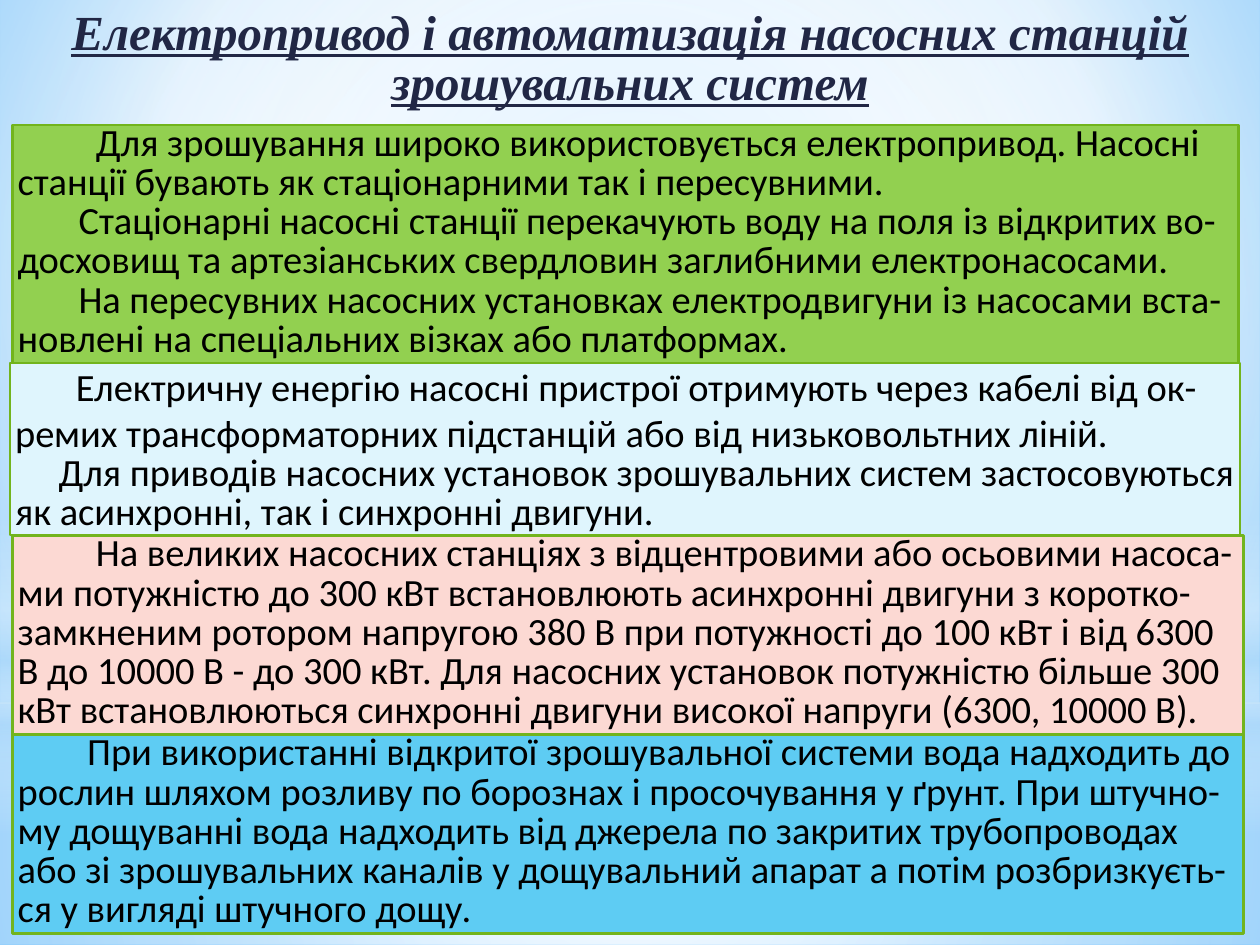
from dataclasses import dataclass

from pptx import Presentation
from pptx.dml.color import RGBColor
from pptx.enum.shapes import MSO_SHAPE
from pptx.enum.text import MSO_ANCHOR, MSO_AUTO_SIZE, PP_ALIGN
from pptx.oxml import parse_xml
from pptx.oxml.ns import nsdecls, qn
from pptx.util import Inches, Pt

RECT, OVAL = MSO_SHAPE.RECTANGLE, MSO_SHAPE.OVAL
TOP, GROW = MSO_ANCHOR.TOP, MSO_AUTO_SIZE.SHAPE_TO_FIT_TEXT
LEFT, CENTER = PP_ALIGN.LEFT, PP_ALIGN.CENTER
TITLE_ONLY = 5
CELL = Inches(0.1)
CENTRE = (50, 50, 50, 50)


@dataclass(frozen=True)
class Theme:
    title_font: str = "Times New Roman"
    body_font: str = "Calibri"
    title_size: int = 28
    body_size: int = 22
    title_color: str = "212745"
    body_color: str = "000000"
    border: str = "72B41D"
    border_width: float = 1.25
    spacing: float = 0.85
    space_width: float = 0.226
    white: str = "FFFFFF"
    haze: str = "B4DCFA"
    sky: str = "9ED5FF"
    deep_sky: str = "5BB9FF"
    green: str = "92D050"
    ice: str = "DFF5FD"
    pink: str = "FCD9D3"
    blue: str = "5ECCF3"


THEME = Theme()

BACKDROP = [(0, THEME.sky, 100), (60, THEME.white, 100), (100, THEME.deep_sky, 100)]

HAZE_LAYERS = [
    (RECT, (0, 55.8, 100, 19.2), CENTRE,
     [(0, THEME.white, 91), (37, THEME.white, 76), (100, THEME.haze, 79)]),
    (RECT, (0, 0, 100, 55.8), CENTRE,
     [(0, THEME.white, 89), (48, THEME.white, 62), (100, THEME.haze, 79)]),
    (RECT, (0, 41.2, 100, 25), None,
     [(0, THEME.white, 0), (29, THEME.white, 30), (45, THEME.haze, 40),
      (55, THEME.white, 26), (65, THEME.haze, 60), (100, THEME.white, 0)]),
    (OVAL, (0, 17.5, 100, 55.8), CENTRE,
     [(0, THEME.white, 100), (56, THEME.white, 0)]),
]

TITLE = "Електропривод і автоматизація насосних станцій зрошувальних систем"

SECTIONS = [
    ((1, 9.9, 97.3, 18.9), THEME.green, [
        (9, THEME.spacing, "Для зрошування широко використовується електропривод. Насосні "
         "станції бувають як стаціонарними так і пересувними."),
        (7, THEME.spacing, "Стаціонарні насосні станції перекачують воду на поля із відкритих "
         "во-досховищ та артезіанських свердловин заглибними електронасосами."),
        (7, THEME.spacing, "На пересувних насосних установках електродвигуни із насосами "
         "вста-новлені на спеціальних візках або платформах."),
    ]),
    ((0.8, 28.8, 97.6, 13.7), THEME.ice, [
        (7, 1.0, "Електричну енергію насосні пристрої отримують через кабелі від "
         "ок-ремих трансформаторних підстанцій або від низьковольтних ліній."),
        (5, THEME.spacing, "Для приводів насосних установок зрошувальних систем "
         "застосовуються як асинхронні, так і синхронні двигуни."),
    ]),
    ((1, 42.5, 97.7, 15.8), THEME.pink, [
        (9, THEME.spacing, "На великих насосних станціях з відцентровими або осьовими "
         "насоса-ми потужністю до 300 кВт встановлюють асинхронні двигуни з "
         "коротко-замкненим ротором напругою 380 В при потужності до 100 кВт і від "
         "6300 В до 10000 В - до 300 кВт. Для насосних установок потужністю більше "
         "300 кВт встановлюються синхронні двигуни високої напруги (6300, 10000 В)."),
    ]),
    ((1, 58.3, 97.7, 15.8), THEME.blue, [
        (8, THEME.spacing, "При використанні відкритої зрошувальної системи вода надходить "
         "до рослин шляхом розливу по борознах і просочування у ґрунт. При штучно-му "
         "дощуванні вода надходить від джерела по закритих трубопроводах або зі "
         "зрошувальних каналів у дощувальний апарат а потім розбризкуєть-ся у вигляді "
         "штучного дощу."),
    ]),
]


def grid(box):
    return [round(cells * CELL) for cells in box]


def set_gradient(fill, owner, stops, focus):
    fill.gradient()
    gradient = owner.find(".//" + qn("a:gradFill"))
    gradient.clear()
    marks = "".join(
        f'<a:gs pos="{pos * 1000}"><a:srgbClr val="{color}">'
        f'<a:alpha val="{opacity * 1000}"/></a:srgbClr></a:gs>'
        for pos, color, opacity in stops)
    gradient.append(parse_xml(f'<a:gsLst {nsdecls("a")}>{marks}</a:gsLst>'))
    if focus:
        sides = " ".join(f'{side}="{share * 1000}"' for side, share in zip("ltrb", focus))
        shade = f'<a:path {nsdecls("a")} path="circle"><a:fillToRect {sides}/></a:path>'
    else:
        shade = f'<a:lin {nsdecls("a")} ang="5400000" scaled="0"/>'
    gradient.append(parse_xml(shade))


def prepare_frame(frame, side_inset):
    frame.word_wrap = True
    frame.auto_size = GROW
    frame.vertical_anchor = TOP
    frame.margin_left = frame.margin_right = Inches(side_inset)
    frame.margin_top = frame.margin_bottom = 0


def write(paragraph, text, *, font, size, color, align=LEFT, spacing=THEME.spacing,
          indent=0, emphasis=False):
    paragraph.alignment = align
    paragraph.line_spacing = spacing
    paragraph.space_before = paragraph.space_after = Pt(0)
    if indent:
        properties = paragraph._p.get_or_add_pPr()
        properties.set("marL", "0")
        properties.set("indent", str(Pt(indent)))
    run = paragraph.add_run()
    run.text = text
    run.font.name = font
    run.font.size = Pt(size)
    run.font.color.rgb = RGBColor.from_string(color)
    run.font.bold = run.font.italic = run.font.underline = emphasis


def draw_backdrop(slide):
    set_gradient(slide.background.fill, slide.element, BACKDROP, (20, 10, 20, 60))
    for outline, box, focus, stops in HAZE_LAYERS:
        layer = slide.shapes.add_shape(outline, *grid(box))
        layer.shadow.inherit = False
        layer.line.fill.background()
        set_gradient(layer.fill, layer.element, stops, focus)


def place_title(slide, box):
    title = slide.shapes.title
    title.left, title.top, title.width, title.height = grid(box)
    title.element.getparent().append(title.element)
    prepare_frame(title.text_frame, 0)
    write(title.text_frame.paragraphs[0], TITLE, font=THEME.title_font,
          size=THEME.title_size, color=THEME.title_color, align=CENTER, emphasis=True)


def draw_section(slide, box, color, passages):
    section = slide.shapes.add_shape(RECT, *grid(box))
    section.shadow.inherit = False
    section.fill.solid()
    section.fill.fore_color.rgb = RGBColor.from_string(color)
    section.line.color.rgb = RGBColor.from_string(THEME.border)
    section.line.width = Pt(THEME.border_width)
    frame = section.text_frame
    prepare_frame(frame, 0.04)
    for number, (spaces, spacing, text) in enumerate(passages):
        paragraph = frame.add_paragraph() if number else frame.paragraphs[0]
        write(paragraph, text, font=THEME.body_font, size=THEME.body_size,
              color=THEME.body_color, spacing=spacing,
              indent=spaces * THEME.space_width * THEME.body_size)


def main():
    deck = Presentation()
    deck.slide_width, deck.slide_height = grid((100, 75))
    slide = deck.slides.add_slide(deck.slide_layouts[TITLE_ONLY])
    draw_backdrop(slide)
    place_title(slide, (1.2, 0.8, 97.6, 8))
    for box, color, passages in SECTIONS:
        draw_section(slide, box, color, passages)
    deck.save("out.pptx")


if __name__ == "__main__":
    main()
